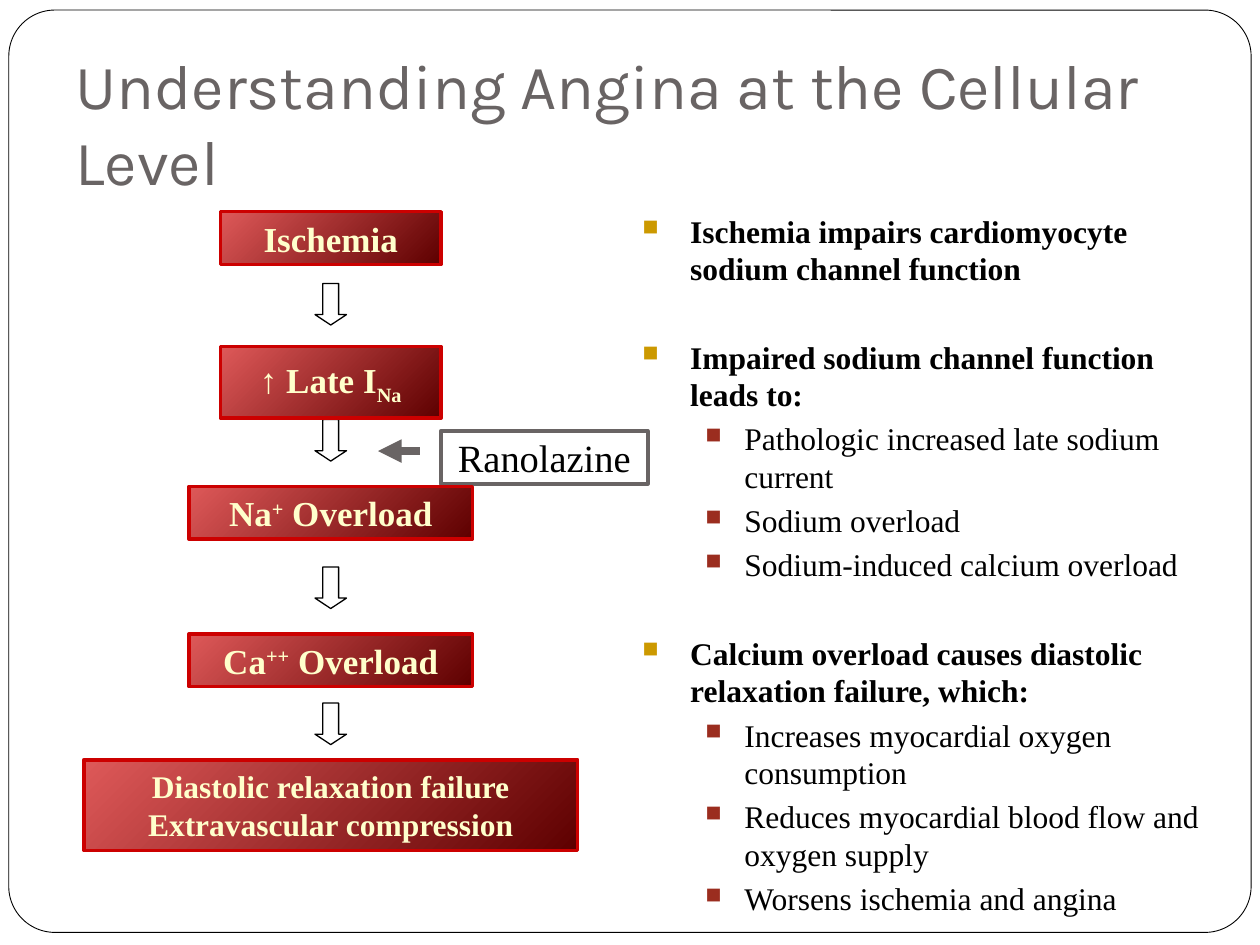
import dataclasses

import lxml.etree
import pptx
import pptx.dml.color
import pptx.enum.shapes
import pptx.enum.text
import pptx.oxml.ns
import pptx.util

Inches = pptx.util.Inches
Pt = pptx.util.Pt
SHAPE = pptx.enum.shapes.MSO_SHAPE
ANCHOR = pptx.enum.text.MSO_ANCHOR
ALIGN = pptx.enum.text.PP_ALIGN
qn = pptx.oxml.ns.qn


@dataclasses.dataclass(frozen=True)
class Theme:
    heading_font: str = "Karla"
    body_font: str = "Times New Roman"
    white: str = "FFFFFF"
    black: str = "000000"
    gray: str = "696464"
    red: str = "CC0000"
    light_red: str = "DE5959"
    dark_red: str = "5E0000"
    cream: str = "FFFFCC"
    bullets: tuple = ("CC9900", "9B2D1F")
    title_size: float = 36
    drug_size: float = 22
    step_size: float = 20
    body_size: float = 18
    bullet_gap: float = 3.6
    group_gap: float = 28.8


THEME = Theme()
FLOW_CENTER = 2.625
STEPS = [
    (1.68, 1.75, 0.42, THEME.step_size, [[("Ischemia", 0)]]),
    (2.75, 1.75, 0.57, THEME.step_size, [[("↑ Late I", 0), ("Na", -25)]]),
    (3.86, 2.25, 0.42, THEME.step_size, [[("Na", 0), ("+", 30), (" Overload", 0)]]),
    (5.03, 2.25, 0.42, THEME.step_size, [[("Ca", 0), ("++", 30), (" Overload", 0)]]),
    (6.03, 3.92, 0.72, THEME.body_size,
     [[("Diastolic relaxation failure", 0)], [("Extravascular compression", 0)]]),
]
ARROW_TOPS = [2.25, 3.33, 4.5, 5.58]
POINTS = [
    ("Ischemia impairs cardiomyocyte sodium channel function", []),
    ("Impaired sodium channel function leads to:", [
        "Pathologic increased late sodium current",
        "Sodium overload",
        "Sodium-induced calcium overload",
    ]),
    ("Calcium overload causes diastolic relaxation failure, which:", [
        "Increases myocardial oxygen consumption",
        "Reduces myocardial blood flow and oxygen supply",
        "Worsens ischemia and angina",
    ]),
]


def rgb(color):
    return pptx.dml.color.RGBColor.from_string(color)


def add_run(p, text, size, color, font=THEME.body_font, bold=False, baseline=0):
    r = p.add_run()
    r.text = text
    r.font.name = font
    r.font.size = Pt(size)
    r.font.bold = bold
    r.font.color.rgb = rgb(color)
    if baseline:
        r._r.get_or_add_rPr().set("baseline", str(baseline * 1000))


def add_box(s, kind, left, top, width, height, line, line_width):
    sp = s.shapes.add_shape(kind, Inches(left), Inches(top), Inches(width), Inches(height))
    sp.shadow.inherit = False
    sp.fill.solid()
    sp.fill.fore_color.rgb = rgb(THEME.white)
    sp.line.color.rgb = rgb(line)
    sp.line.width = Pt(line_width)
    return sp


def center_text(sp, lines, size, color, bold=False):
    tf = sp.text_frame
    tf.word_wrap = False
    tf.vertical_anchor = ANCHOR.MIDDLE
    for i, runs in enumerate(lines):
        p = tf.add_paragraph() if i else tf.paragraphs[0]
        p.alignment = ALIGN.CENTER
        for text, baseline in runs:
            add_run(p, text, size, color, bold=bold, baseline=baseline)


def add_frame(s):
    sp = add_box(s, SHAPE.ROUNDED_RECTANGLE, 0.07, 0.08, 9.86, 7.32, THEME.black, 0.5)
    sp.adjustments[0] = 0.05


def add_textbox(s, left, top, width, height):
    sp = s.shapes.add_textbox(Inches(left), Inches(top), Inches(width), Inches(height))
    sp.text_frame.word_wrap = True
    return sp.text_frame


def add_title(s, text):
    tf = add_textbox(s, 0.5, 0.42, 9.08, 1.25)
    tf.vertical_anchor = ANCHOR.BOTTOM
    tf.margin_bottom = Inches(0.1)
    add_run(tf.paragraphs[0], text, THEME.title_size, THEME.gray, THEME.heading_font)


def add_step(s, top, width, height, size, lines):
    sp = add_box(s, SHAPE.RECTANGLE, FLOW_CENTER - width / 2, top, width, height, THEME.red, 2)
    sp.fill.gradient()
    sp.fill.gradient_angle = 315
    for stop, color in zip(sp.fill.gradient_stops, (THEME.light_red, THEME.dark_red)):
        stop.color.rgb = rgb(color)
    center_text(sp, lines, size, THEME.cream, bold=True)


def add_down_arrow(s, top):
    sp = add_box(s, SHAPE.DOWN_ARROW, FLOW_CENTER - 0.125, top, 0.25, 0.33, THEME.black, 0.75)
    sp.adjustments[1] = 0.33


def add_drug(s, name):
    sp = add_box(s, SHAPE.RECTANGLE, 3.5, 3.42, 1.64, 0.42, THEME.gray, 2.25)
    center_text(sp, [[(name, 0)]], THEME.drug_size, THEME.black)
    line = s.shapes.add_connector(pptx.enum.shapes.MSO_CONNECTOR.STRAIGHT,
                                  Inches(3.33), Inches(3.58), Inches(3), Inches(3.58))
    line.line.color.rgb = rgb(THEME.gray)
    line.line.width = Pt(4.5)
    lxml.etree.SubElement(line.line._get_or_add_ln(), qn("a:tailEnd"), type="triangle")
    lxml.etree.SubElement(line._element.spPr, qn("a:effectLst"))


def set_bullet(p, level):
    pPr = p._p.get_or_add_pPr()
    margin, indent = ((0.38, 0.38), (0.81, 0.31))[level]
    pPr.set("marL", str(Inches(margin)))
    pPr.set("indent", str(-Inches(indent)))
    color = lxml.etree.SubElement(pPr, qn("a:buClr"))
    lxml.etree.SubElement(color, qn("a:srgbClr"), val=THEME.bullets[level])
    lxml.etree.SubElement(pPr, qn("a:buSzPct"), val="70000")
    lxml.etree.SubElement(pPr, qn("a:buChar"), char="■")


def add_point(p, text, level, gap):
    p.level = level
    p.space_before = Pt(gap)
    set_bullet(p, level)
    add_run(p, text, THEME.body_size, THEME.black, bold=level == 0)


def add_points(s):
    tf = add_textbox(s, 5, 1.63, 4.83, 4.95)
    for i, (heading, details) in enumerate(POINTS):
        p = tf.add_paragraph() if i else tf.paragraphs[0]
        add_point(p, heading, 0, THEME.group_gap if i else THEME.bullet_gap)
        for detail in details:
            add_point(tf.add_paragraph(), detail, 1, THEME.bullet_gap)


def main():
    prs = pptx.Presentation()
    prs.slide_width = Inches(10)
    prs.slide_height = Inches(7.5)
    s = prs.slides.add_slide(prs.slide_layouts[6])
    add_frame(s)
    add_title(s, "Understanding Angina at the Cellular Level")
    for top in ARROW_TOPS:
        add_down_arrow(s, top)
    add_points(s)
    add_drug(s, "Ranolazine")
    for step in STEPS:
        add_step(s, *step)
    prs.save("out.pptx")


if __name__ == "__main__":
    main()
